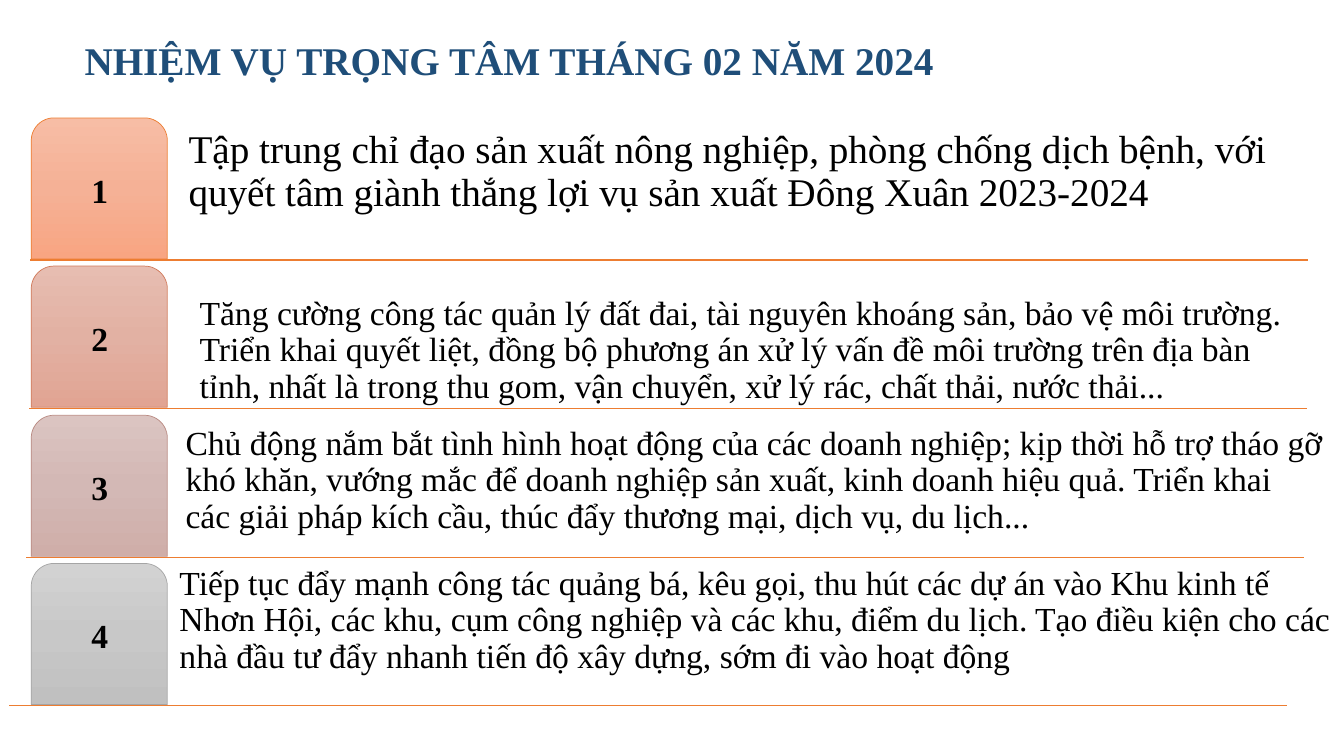
import copy

import pptx
import pptx.dml.color
import pptx.enum.shapes
import pptx.enum.text
import pptx.oxml
import pptx.oxml.ns
import pptx.util

PX = 9144  # EMU per px, 100 px to the inch
FONT = "Times New Roman"
COLORS = {"title": "1F4E79", "text": "000000", "rule": "ED7D31"}

TAB_LEFT, TAB_WIDTH, TAB_HEIGHT = 31, 135, 140
FIRST_TOP, ROW_PITCH = 117, 147.33
RULE_OFFSET, RULE_LENGTH = 141, 1267

# Tab gradient, tab outline, rule start, text box, text size, text inset, text
TASKS = [
    (("F7BDA5", "F5B196", "F8A582"), "ED7D31", 30, (181, 146, 1138, 73), 28, 6,
     "Tập trung chỉ đạo sản xuất nông nghiệp, phòng chống dịch bệnh, với "
     "quyết tâm giành thắng lợi vụ sản xuất Đông Xuân 2023-2024"),
    (("E7BDB1", "E2B1A3", "E1A493"), "D17B5C", 29, (193, 291, 1106, 116), 24, 5,
     "Tăng cường công tác quản lý đất đai, tài nguyên khoáng sản, bảo vệ môi trường. "
     "Triển khai quyết liệt, đồng bộ phương án xử lý vấn đề môi trường trên địa bàn "
     "tỉnh, nhất là trong thu gom, vận chuyển, xử lý rác, chất thải, nước thải..."),
    (("DBC4C1", "D3B8B5", "CFAEA9"), "B98A82", 26, (179, 396, 1139, 140), 24, 5,
     "Chủ động nắm bắt tình hình hoạt động của các doanh nghiệp; kịp thời hỗ trợ tháo gỡ "
     "khó khăn, vướng mắc để doanh nghiệp sản xuất, kinh doanh hiệu quả. Triển khai "
     "các giải pháp kích cầu, thúc đẩy thương mại, dịch vụ, du lịch..."),
    (("D2D2D2", "C8C8C8", "C0C0C0"), "A5A5A5", 9, (173, 582, 1161, 93), 24, 5,
     "Tiếp tục đẩy mạnh công tác quảng bá, kêu gọi, thu hút các dự án vào Khu kinh tế "
     "Nhơn Hội, các khu, cụm công nghiệp và các khu, điểm du lịch. Tạo điều kiện cho các "
     "nhà đầu tư đẩy nhanh tiến độ xây dựng, sớm đi vào hoạt động"),
]


def emu(*lengths):
    return [pptx.util.Emu(length * PX) for length in lengths]


def rgb(hex_color):
    return pptx.dml.color.RGBColor.from_string(hex_color)


def add_text(slide, box, text, size=24, color="text", bold=False, align="LEFT",
             anchor="BOTTOM", inset=(5, 5), line_spacing=0.9):
    """Add a text box; inset is (horizontal, vertical) in px."""
    frame = slide.shapes.add_textbox(*emu(*box)).text_frame
    frame.word_wrap = True
    frame.vertical_anchor = getattr(pptx.enum.text.MSO_ANCHOR, anchor)
    frame.margin_left, frame.margin_top = emu(*inset)
    frame.margin_right, frame.margin_bottom = emu(*inset)
    paragraph = frame.paragraphs[0]
    paragraph.alignment = getattr(pptx.enum.text.PP_ALIGN, align)
    paragraph.line_spacing = line_spacing
    run = paragraph.add_run()
    run.text = text
    run.font.name = FONT
    run.font.size = pptx.util.Pt(size)
    run.font.bold = bold
    run.font.color.rgb = rgb(COLORS[color])


def add_rule(slide, left, top):
    connector = slide.shapes.add_connector(
        pptx.enum.shapes.MSO_CONNECTOR.STRAIGHT,
        *emu(left, top, left + RULE_LENGTH, top))
    connector.line.color.rgb = rgb(COLORS["rule"])
    connector.line.width = pptx.util.Pt(1)
    properties = connector._element.spPr
    properties.append(pptx.oxml.parse_xml(
        f'<a:effectLst {pptx.oxml.ns.nsdecls("a")}/>'))


def fill_gradient(shape, hex_colors):
    """Fill from top to bottom with evenly spaced colours."""
    shape.fill.gradient()
    shape.fill.gradient_angle = 270
    stop_list = shape._element.spPr.find(".//" + pptx.oxml.ns.qn("a:gsLst"))
    while len(stop_list) < len(hex_colors):
        stop_list.append(copy.deepcopy(stop_list[0]))
    for index, stop in enumerate(shape.fill.gradient_stops):
        stop.position = index / (len(hex_colors) - 1)
        stop.color.rgb = rgb(hex_colors[index])


def add_numbered_tab(slide, number, top, gradient, outline):
    tab = slide.shapes.add_shape(
        pptx.enum.shapes.MSO_SHAPE.ROUND_2_SAME_RECTANGLE,
        *emu(TAB_LEFT, top, TAB_WIDTH, TAB_HEIGHT))
    tab.shadow.inherit = False
    tab.adjustments[0] = 0.167
    fill_gradient(tab, gradient)
    tab.line.color.rgb = rgb(outline)
    tab.line.width = pptx.util.Pt(0.5)
    label_box = (TAB_LEFT + 7, top + 7, TAB_WIDTH - 13, TAB_HEIGHT - 6)
    add_text(slide, label_box, str(number), bold=True, align="CENTER", anchor="MIDDLE")


def main():
    presentation = pptx.Presentation()
    presentation.slide_width, presentation.slide_height = emu(1333, 750)
    slide = presentation.slides.add_slide(presentation.slide_layouts[6])

    tops = [round(FIRST_TOP + index * ROW_PITCH) for index in range(len(TASKS))]
    for top, task in zip(tops, TASKS):
        add_rule(slide, task[2], top + RULE_OFFSET)
    for number, (top, task) in enumerate(zip(tops, TASKS), start=1):
        gradient, outline, _, box, size, inset, text = task
        add_text(slide, box, text, size=size, inset=(inset, inset))
        add_numbered_tab(slide, number, top, gradient, outline)

    add_text(slide, (74, 31, 870, 57), "NHIỆM VỤ TRỌNG TÂM THÁNG 02 NĂM 2024",
             size=28, color="title", bold=True, anchor="TOP", inset=(10, 5),
             line_spacing=1.0)
    presentation.save("out.pptx")


if __name__ == "__main__":
    main()
